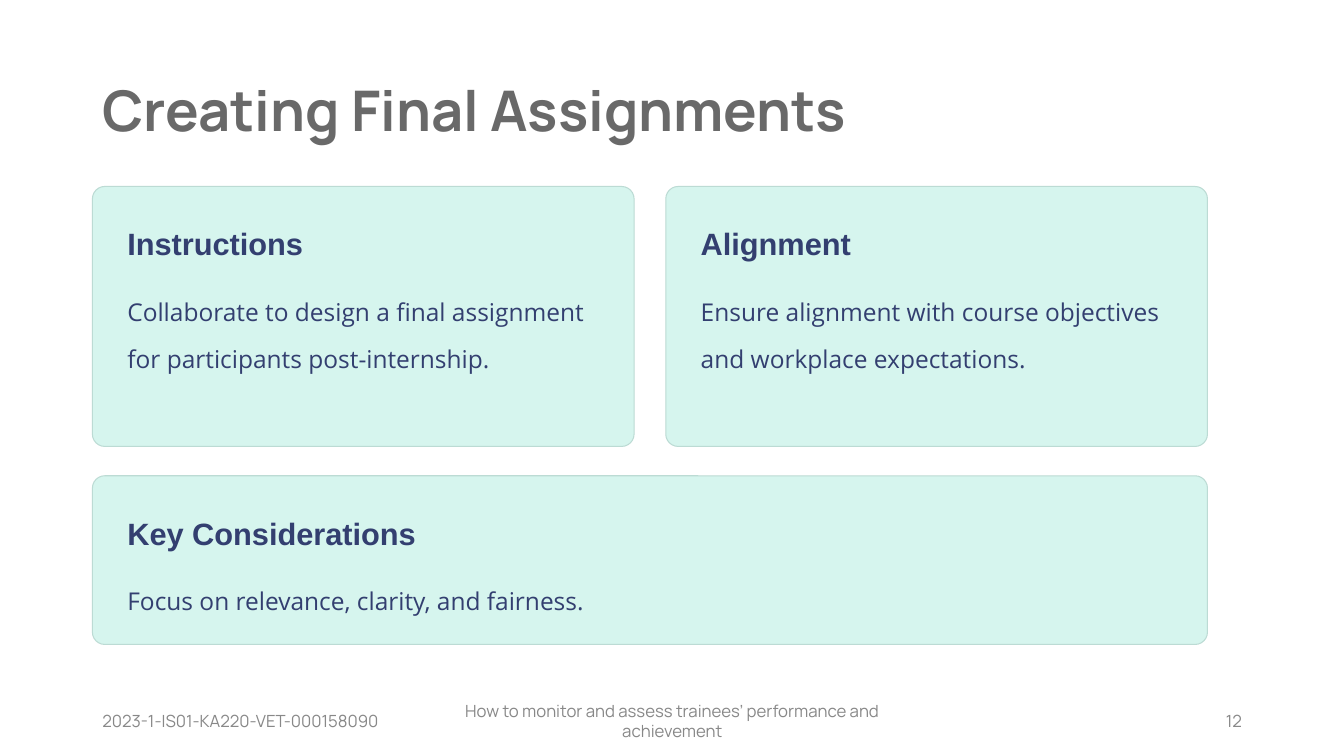
from pptx import Presentation
from pptx.dml.color import RGBColor
from pptx.enum.shapes import MSO_SHAPE
from pptx.enum.text import MSO_ANCHOR, PP_ALIGN
from pptx.util import Cm, Pt

ROUNDED = MSO_SHAPE.ROUNDED_RECTANGLE
TOP, MIDDLE = MSO_ANCHOR.TOP, MSO_ANCHOR.MIDDLE
LEFT, CENTER, RIGHT = PP_ALIGN.LEFT, PP_ALIGN.CENTER, PP_ALIGN.RIGHT
JUSTIFY = PP_ALIGN.JUSTIFY

WHITE = RGBColor(0xFF, 0xFF, 0xFF)
TITLE_GREY = RGBColor(0x69, 0x69, 0x69)
FOOTER_GREY = RGBColor(0x88, 0x88, 0x88)
MINT = RGBColor(0xD6, 0xF5, 0xEE)
MINT_EDGE = RGBColor(0xBC, 0xDB, 0xD4)
NAVY = RGBColor(0x33, 0x3F, 0x70)

# Layout in centimetres
MARGIN = 2.33
CONTENT_WIDTH = 28.1
GAP = 0.8
HALF_WIDTH = (CONTENT_WIDTH - GAP) / 2
UPPER_TOP, UPPER_HEIGHT = 4.7, 6.55
LOWER_TOP, LOWER_HEIGHT = 11.99, 4.25


class AssignmentSlide:
    """Holds the slide and its style."""

    brand_font, heading_font, body_font = "Manrope", "Arial", "Open Sans"
    radius = 0.31
    pad_x, pad_y = 0.88, 0.74
    body_offset = 2.31

    def __init__(self, deck):
        self.slide = deck.slides.add_slide(deck.slide_layouts[6])
        background = self.slide.background.fill
        background.solid()
        background.fore_color.rgb = WHITE

    def text(self, box, words, size, font, color, bold=False, align=LEFT,
             spacing=1.0, anchor=TOP, inset=(0, 0)):
        frame = self.slide.shapes.add_textbox(*map(Cm, box)).text_frame
        frame.word_wrap = True
        frame.vertical_anchor = anchor
        frame.margin_left = frame.margin_right = Cm(inset[0])
        frame.margin_top = frame.margin_bottom = Cm(inset[1])
        paragraph = frame.paragraphs[0]
        paragraph.alignment = align
        paragraph.line_spacing = spacing
        run = paragraph.add_run()
        run.text = words
        run.font.size = Pt(size)
        run.font.name = font
        run.font.bold = bold
        run.font.color.rgb = color

    def title(self, words):
        self.text((MARGIN, 1.02, 24.18, 3.68), words, 40, self.brand_font,
                  TITLE_GREY, bold=True, align=JUSTIFY, spacing=0.9,
                  anchor=MIDDLE, inset=(0.25, 0.13))

    def footer(self, left, width, words, align):
        self.text((left, 17.65, width, 1.02), words, 12, self.brand_font,
                  FOOTER_GREY, align=align, anchor=MIDDLE, inset=(0.25, 0.13))

    def card(self, left, top, width, height, heading, body):
        panel = self.slide.shapes.add_shape(
            ROUNDED, Cm(left), Cm(top), Cm(width), Cm(height))
        panel.adjustments[0] = self.radius / min(width, height)
        panel.shadow.inherit = False
        panel.fill.solid()
        panel.fill.fore_color.rgb = MINT
        panel.line.color.rgb = MINT_EDGE
        panel.line.width = Pt(0.75)

        text_left = left + self.pad_x
        text_width = width - 2 * self.pad_x
        self.text((text_left, top + self.pad_y, text_width, 1.14), heading,
                  22, self.heading_font, NAVY, bold=True, spacing=1.25)
        body_height = height - self.body_offset - self.pad_y
        self.text((text_left, top + self.body_offset, text_width, body_height),
                  body, 17.5, self.body_font, NAVY, spacing=1.63)


def main():
    deck = Presentation()
    deck.slide_width, deck.slide_height = Cm(33.87), Cm(19.05)
    page = AssignmentSlide(deck)

    page.title("Creating Final Assignments")

    # Two cards side by side
    upper_cards = [
        ("Instructions", "Collaborate to design a final assignment for "
                         "participants post-internship."),
        ("Alignment", "Ensure alignment with course objectives and "
                      "workplace expectations."),
    ]
    for column, (heading, body) in enumerate(upper_cards):
        page.card(MARGIN + column * (HALF_WIDTH + GAP), UPPER_TOP,
                  HALF_WIDTH, UPPER_HEIGHT, heading, body)

    # Full-width card
    page.card(MARGIN, LOWER_TOP, CONTENT_WIDTH, LOWER_HEIGHT,
              "Key Considerations", "Focus on relevance, clarity, and fairness.")

    # Footer: project number, course name, page number
    page.footer(MARGIN, 7.62, "2023-1-IS01-KA220-VET-000158090", LEFT)
    page.footer(11.23, 11.43, "How to monitor and assess trainees’ "
                "performance and achievement", CENTER)
    page.footer(23.93, 7.62, "12", RIGHT)

    deck.save("out.pptx")


if __name__ == "__main__":
    main()
